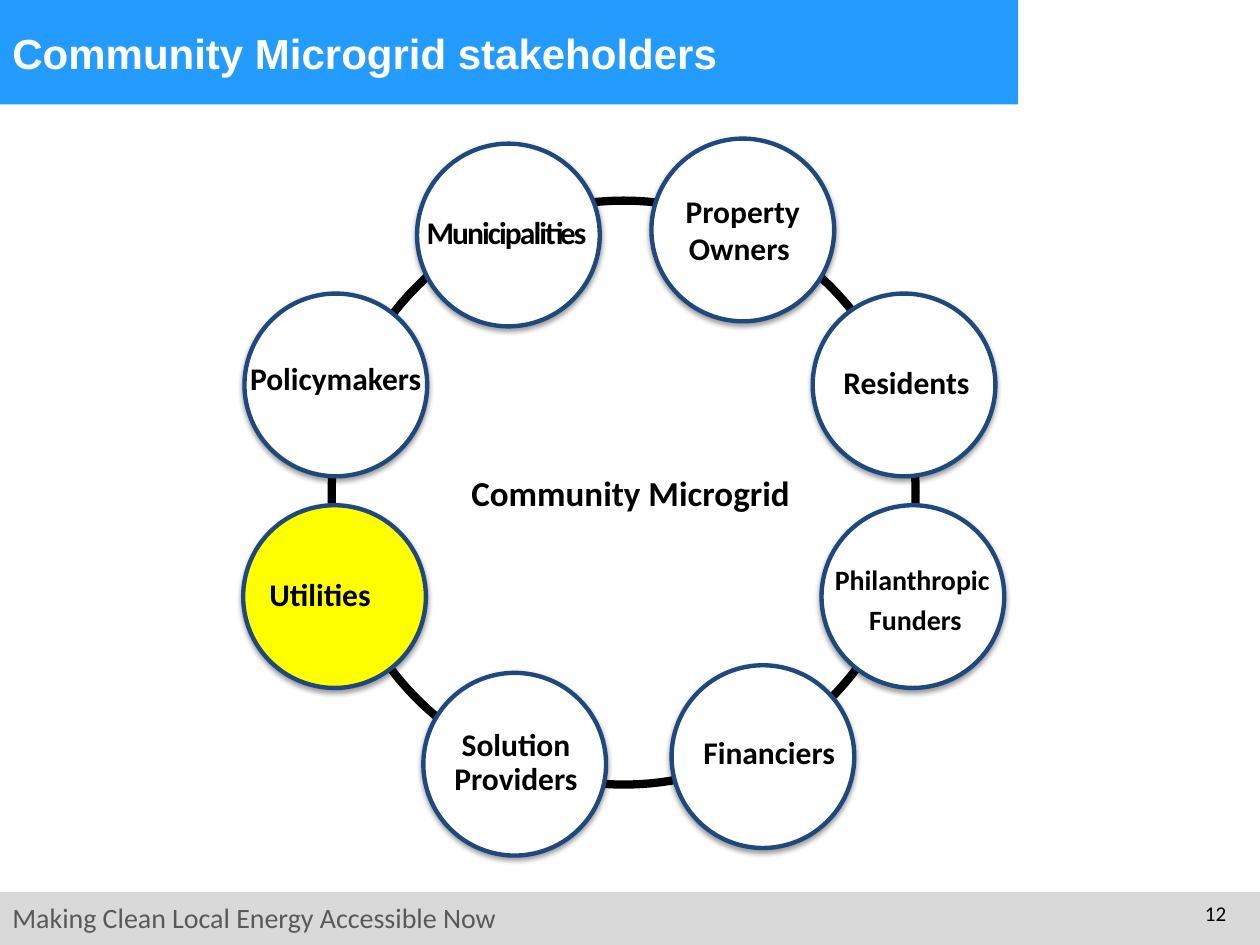
from dataclasses import dataclass
from lxml.etree import SubElement as Sub
from pptx import Presentation
from pptx.dml.color import RGBColor as RGB
from pptx.enum.shapes import MSO_SHAPE as Kind
from pptx.enum.text import MSO_ANCHOR as Anchor, PP_ALIGN as Align
from pptx.oxml.ns import qn
from pptx.util import Inches, Pt

COLS, ROWS = 100, 75


@dataclass(frozen=True)
class Theme:
    black: str = "000000"
    white: str = "FFFFFF"
    blue: str = "249CFF"
    navy: str = "1F497D"
    yellow: str = "FFFF00"
    pale: str = "D9D9D9"
    gray: str = "595959"
    head: str = "Arial"
    body: str = "Calibri"
    title: int = 24
    hub: int = 20
    label: int = 18
    small: int = 16
    page: int = 12


@dataclass(frozen=True)
class Box:
    x: float
    y: float
    w: float
    h: float

    def inner(self, x, y, w, h):
        return Box(self.x + x, self.y + y, w, h)

    def place(self):
        return [Inches(v * 10 / COLS) for v in (self.x, self.y, self.w, self.h)]


@dataclass(frozen=True)
class Node:
    label: str
    x: float
    y: float
    dx: float
    w: float
    dy: float = 2.1
    size: int = Theme.label
    fill: str = Theme.white
    tight: bool = True
    squeeze: int = 0


T = Theme()
DISC, LABEL = 14.5, 10.2
NODES = (
    Node("Financiers", 27.3, 41.8, 1.9, 11.7, 2),
    Node("Solution Providers", 7.6, 42.4, 0.3, 14.1),
    Node("Utilities", -6.7, 29.1, -0.1, 12.4, fill=T.yellow),
    Node("Property Owners ", 25.7, 0, 0, 14.5, tight=False),
    Node("Municipalities", 7.1, 0.4, -0.6, 15.4, squeeze=-110),
    Node("Residents", 38.5, 12.3, 1.6, 11.7),
    Node("Philanthropic \nFunders", 39.2, 29.1, 0.5, 13.9, 2.5, T.small),
    Node("Policymakers", -6.6, 12.3, 0.2, 14.1, 1.8),
)


def shape(slide, kind, box, fill):
    item = slide.shapes.add_shape(kind, *box.place())
    item.shadow.inherit = False
    item.fill.solid()
    item.fill.fore_color.rgb = RGB.from_string(fill)
    item.line.fill.background()
    return item


def shade(item):
    cast = Sub(item._element.spPr.find(qn("a:effectLst")), qn("a:outerShdw"),
               blurRad=str(Pt(3.1)), dist=str(Pt(1.6)), dir="5400000",
               rotWithShape="0")
    color = Sub(cast, qn("a:srgbClr"), val=T.black)
    Sub(color, qn("a:alpha"), val="38000")


def write(slide, box, text, size, color=T.black, face=T.body, bold=True,
          align=Align.LEFT, anchor=Anchor.TOP, wrap=True):
    frame = slide.shapes.add_textbox(*box.place()).text_frame
    frame.word_wrap = wrap
    frame.vertical_anchor = anchor
    frame.text = text
    for para in frame.paragraphs:
        para.alignment = align
        font = para.font
        font.name, font.size, font.bold = face, Pt(size), bold
        font.color.rgb = RGB.from_string(color)
    return frame


def header(slide, box):
    shape(slide, Kind.RECTANGLE, box, T.blue)
    write(slide, box.inner(0, 0, 80, box.h), "Community Microgrid stakeholders",
          T.title, T.white, T.head, anchor=Anchor.MIDDLE)


def footer(slide, box):
    shape(slide, Kind.RECTANGLE, box, T.pale)
    write(slide, box.inner(0, 0.2, 51.7, 3.7),
          "Making Clean Local Energy Accessible Now", T.small, T.gray, bold=False)
    write(slide, box.inner(93.3, 0.2, 5, 4), "12", T.page, bold=False,
          align=Align.RIGHT)


def disc(slide, box, node):
    item = shape(slide, Kind.OVAL, box, node.fill)
    item.line.color.rgb = RGB.from_string(T.navy)
    item.line.width = Pt(2.5)
    shade(item)
    frame = write(slide, box.inner(node.dx, node.dy, node.w, LABEL), node.label,
                  node.size, align=Align.CENTER, anchor=Anchor.MIDDLE)
    frame.margin_left = frame.margin_right = Inches(0.01)
    frame.margin_top = frame.margin_bottom = Inches(0.01)
    for para in frame.paragraphs:
        if node.tight:
            para.line_spacing = 0.9
            para.space_after = Pt(round(node.size * 0.35, 1))
        if node.squeeze:
            for run in para.runs:
                run.font._element.set("spc", str(node.squeeze))


def wheel(slide, box):
    ring = shape(slide, Kind.DONUT, box.inner(0, 4.6, box.w, box.w), T.black)
    ring.adjustments[0] = 0.014
    write(slide, box.inner(10.3, 25.9, 27.5, 4.4), "Community Microgrid", T.hub,
          align=Align.CENTER, wrap=False)
    for node in NODES:
        disc(slide, box.inner(node.x, node.y, DISC, DISC), node)


def main():
    deck = Presentation()
    deck.slide_width, deck.slide_height = Inches(10), Inches(7.5)
    slide = deck.slides.add_slide(deck.slide_layouts[6])
    footer(slide, Box(0, 70.8, COLS, ROWS - 70.8))
    header(slide, Box(0, 0, 80.8, 8.3))
    wheel(slide, Box(26, 11, 47, 57))
    deck.save("out.pptx")


if __name__ == "__main__":
    main()
